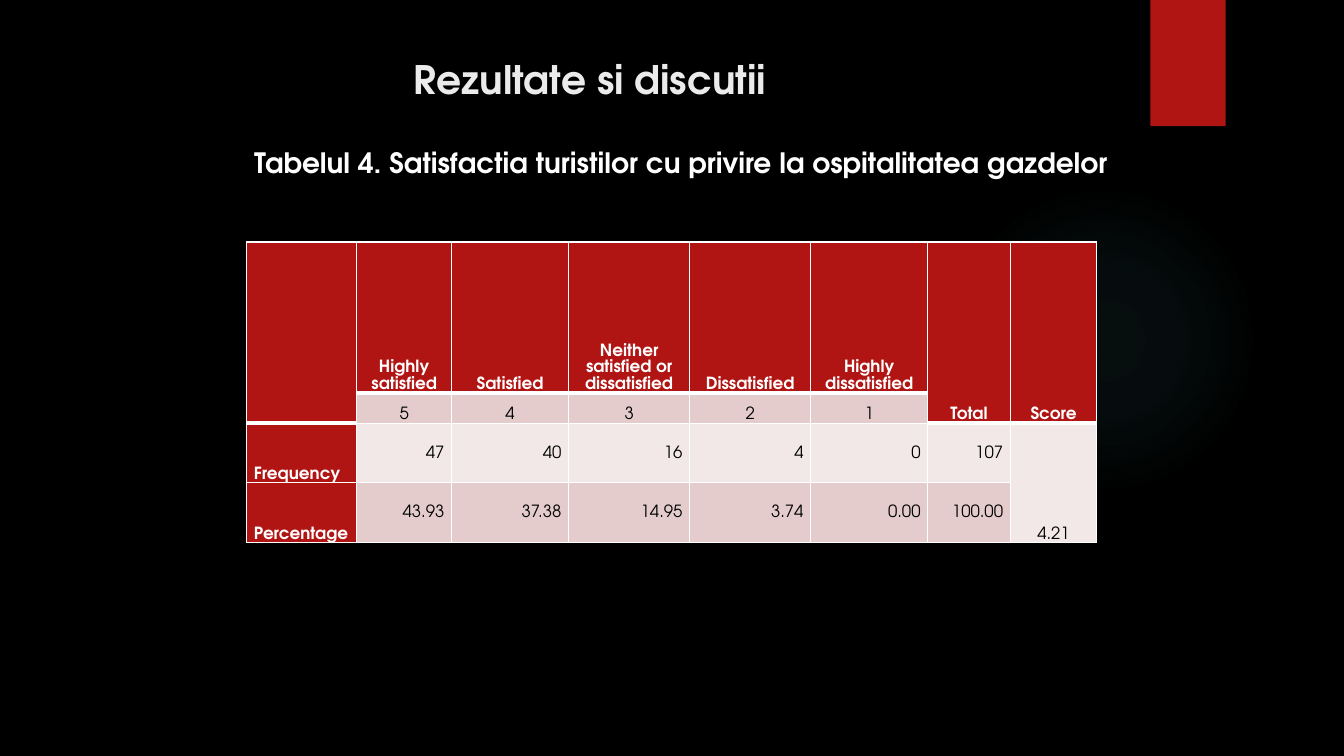
from lxml import etree
from pptx import Presentation
from pptx.dml.color import RGBColor
from pptx.enum.shapes import MSO_SHAPE as Shape
from pptx.enum.text import MSO_ANCHOR as Anchor, PP_ALIGN as Align
from pptx.oxml import parse_xml
from pptx.oxml.ns import qn
from pptx.util import Cm, Pt

FONT = "TeX Gyre Adventor"
COLORS = {
    "black": "000000", "white": "FFFFFF", "title": "EBEBEB", "red": "B01513",
    "band": "E4CCCC", "pale": "F2E8E7", "glow": "50B9C1",
}
HEADINGS = [
    ("Rezultate si discutii", (1.8, 1.27, 26.14, 1.78), 28, "title"),
    ("Tabelul 4. Satisfactia turistilor cu privire la ospitalitatea gazdelor",
     (2.74, 3.53, 28.85, 14.05), 20, "white"),
]
ROWS = [
    ["", "Highly satisfied", "Satisfied", "Neither satisfied or dissatisfied",
     "Dissatisfied", "Highly dissatisfied", "Total", "Score"],
    ["", "5", "4", "3", "2", "1", "", ""],
    ["Frequency", "47", "40", "16", "4", "0", "107", "4.21"],
    ["Percentage", "43.93", "37.38", "14.95", "3.74", "0.00", "100.00", ""],
]
COLUMN_WIDTHS = [2.77, 2.39, 2.95, 3.05, 3.05, 2.95, 2.08, 2.18]
ROW_HEIGHTS = [3.8, 0.76, 1.5, 1.5]
TABLE_LEFT, TABLE_TOP = 6.22, 6.1
TALL_HEADERS = (0, 6, 7)
SCORE_COLUMN = 7
MERGES = [(0, column) for column in TALL_HEADERS] + [(2, SCORE_COLUMN)]
GLOW_STOPS = [(0, 7), (36, 6), (69, 0)]


def color(name):
    return RGBColor.from_string(COLORS[name])


def write(para, text, size, color_name, bold, align):
    para.alignment = align
    span = para.add_run()
    span.text = text
    look = {"name": FONT, "size": Pt(size), "bold": bold}
    for key, value in look.items():
        setattr(span.font, key, value)
    span.font.color.rgb = color(color_name)


def add_plain(page, kind, box, fill_name):
    shape = page.shapes.add_shape(kind, *map(Cm, box))
    shape.shadow.inherit = False
    shape.line.fill.background()
    shape.fill.solid()
    shape.fill.fore_color.rgb = color(fill_name)
    return shape


def add_glow(page):
    glow = add_plain(page, Shape.OVAL, (23.9, 4.65, 7.82, 7.82), "glow")
    stops = "".join(
        f'<a:gs pos="{place * 1000}"><a:srgbClr val="{COLORS["glow"]}">'
        f'<a:alpha val="{alpha * 1000}"/></a:srgbClr></a:gs>'
        for place, alpha in GLOW_STOPS)
    gradient = parse_xml(
        '<a:gradFill xmlns:a="http://schemas.openxmlformats.org/drawingml/2006/main">'
        f'<a:gsLst>{stops}</a:gsLst><a:path path="circle">'
        '<a:fillToRect l="50000" t="50000" r="50000" b="50000"/></a:path></a:gradFill>')
    solid = glow._element.spPr.find(qn("a:solidFill"))
    solid.getparent().replace(solid, gradient)


def add_heading(page, text, box, size, color_name):
    frame = page.shapes.add_textbox(*map(Cm, box)).text_frame
    frame.word_wrap = True
    frame.vertical_anchor = Anchor.TOP
    write(frame.paragraphs[0], text, size, color_name, True, Align.CENTER)


def rule_below(row, column):
    header_end = 1 if column in TALL_HEADERS else 0
    return 3 if row == header_end else 1


def add_borders(cell, row, column):
    bottom = rule_below(row, column)
    if row == 0 and column in TALL_HEADERS:
        bottom = 3
    widths = {"lnL": 1, "lnR": 1, "lnT": rule_below(row - 1, column), "lnB": bottom}
    properties = cell._tc.get_or_add_tcPr()
    for side, width in widths.items():
        line = etree.SubElement(properties, qn(f"a:{side}"), w=str(Pt(width)))
        fill = etree.SubElement(line, qn("a:solidFill"))
        etree.SubElement(fill, qn("a:srgbClr"), val=COLORS["white"])


def format_cell(cell, row, column, text):
    is_label = row == 0 or column == 0 or (row == 1 and column in TALL_HEADERS)
    is_number = row > 1 and 0 < column < SCORE_COLUMN
    if is_label:
        fill_name = "red"
    else:
        fill_name = "pale" if row == 2 or column == SCORE_COLUMN else "band"
    if is_number:
        align = Align.RIGHT
    else:
        align = Align.LEFT if row > 1 and column == 0 else Align.CENTER
    add_borders(cell, row, column)
    layout = {
        "margin_left": Cm(0.18), "margin_right": Cm(0.18),
        "margin_top": 0, "margin_bottom": 0,
        "vertical_anchor": Anchor.MIDDLE if is_number else Anchor.BOTTOM,
    }
    for key, value in layout.items():
        setattr(cell, key, value)
    cell.fill.solid()
    cell.fill.fore_color.rgb = color(fill_name)
    para = cell.text_frame.paragraphs[0]
    para.line_spacing = 1.07
    write(para, text, 12, "white" if is_label else "black", is_label, align)


def add_satisfaction_table(page):
    table = page.shapes.add_table(
        len(ROWS), len(COLUMN_WIDTHS), Cm(TABLE_LEFT), Cm(TABLE_TOP),
        Cm(sum(COLUMN_WIDTHS)), Cm(sum(ROW_HEIGHTS))).table
    for column, width in zip(table.columns, COLUMN_WIDTHS):
        column.width = Cm(width)
    for row, height in zip(table.rows, ROW_HEIGHTS):
        row.height = Cm(height)
    for row, texts in enumerate(ROWS):
        for column, text in enumerate(texts):
            format_cell(table.cell(row, column), row, column, text)
    for row, column in MERGES:
        table.cell(row, column).merge(table.cell(row + 1, column))


def main():
    deck = Presentation()
    deck.slide_width, deck.slide_height = Cm(33.87), Cm(19.05)
    page = deck.slides.add_slide(deck.slide_layouts[6])
    page.background.fill.solid()
    page.background.fill.fore_color.rgb = color("black")
    add_glow(page)
    add_plain(page, Shape.RECTANGLE, (28.99, 0, 1.9, 3.18), "red")
    for heading in HEADINGS:
        add_heading(page, *heading)
    add_satisfaction_table(page)
    deck.save("out.pptx")


if __name__ == "__main__":
    main()
